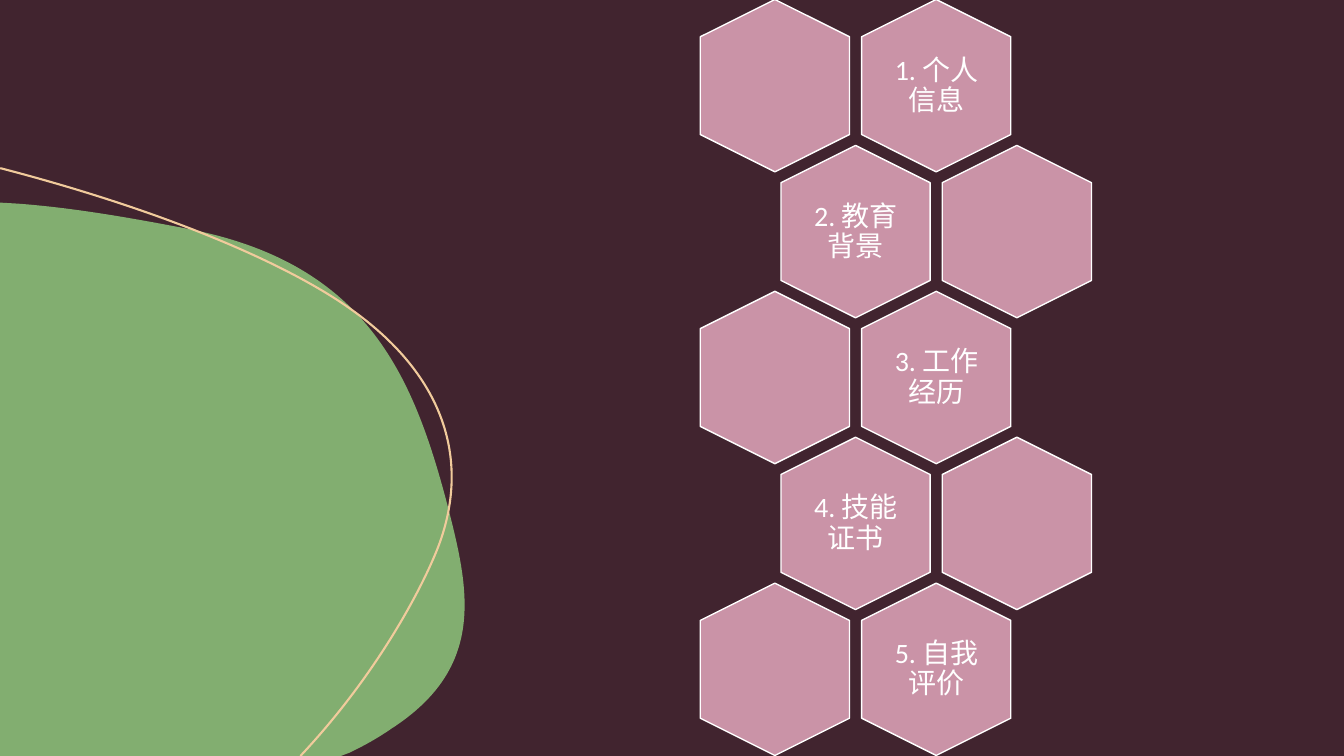
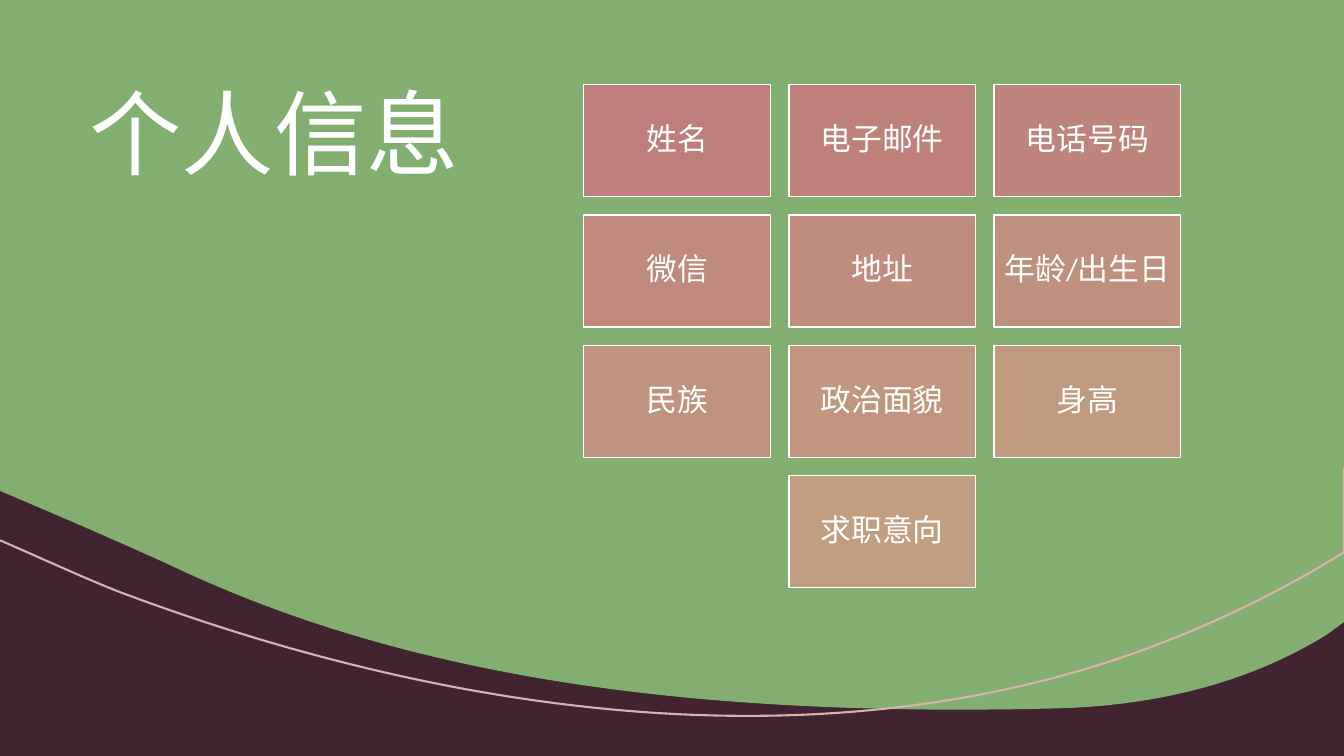
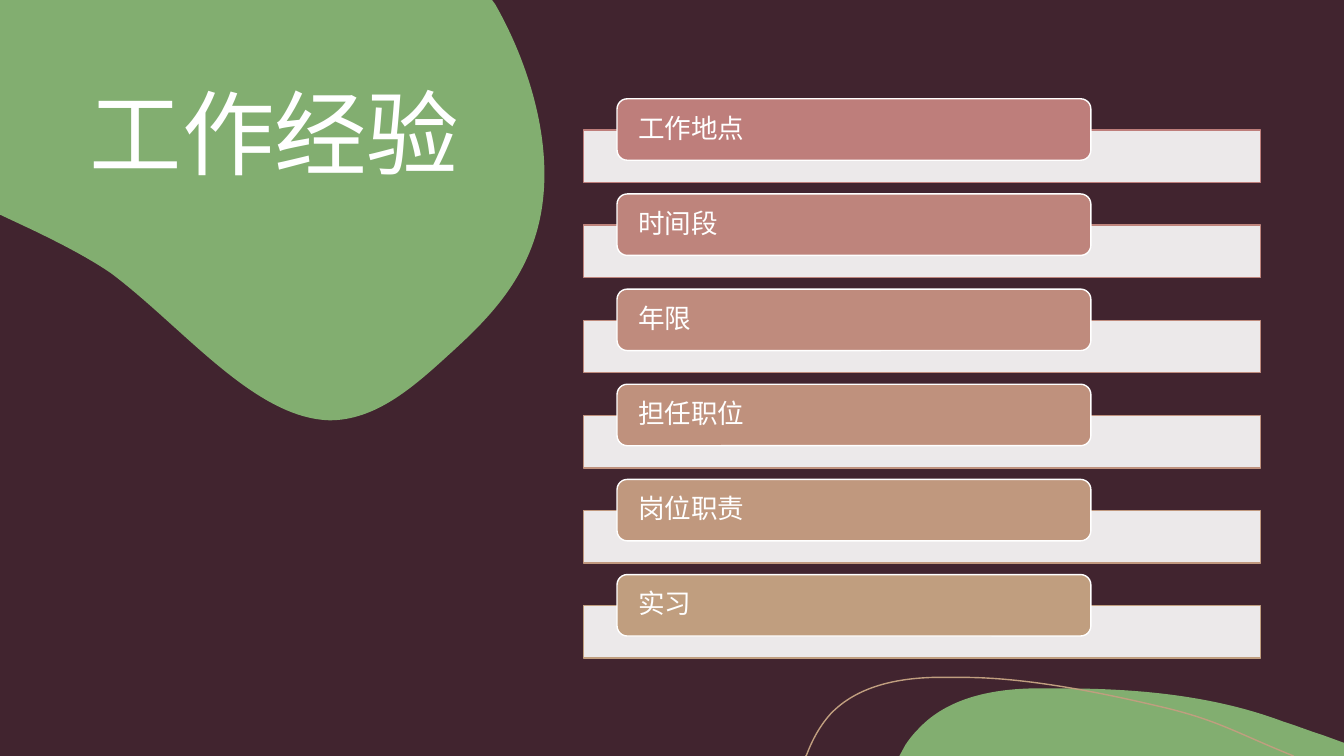
from pptx import Presentation
from pptx.dml.color import RGBColor
from pptx.enum.shapes import MSO_SHAPE as Preset
from pptx.enum.text import MSO_ANCHOR as Anchor, PP_ALIGN as Align
from pptx.oxml.ns import qn
from pptx.util import Inches, Pt
from lxml.etree import SubElement

SLIDE_W, SLIDE_H = 13.33, 7.5
PLUM, GREEN, PINK, WHITE = "41242F", "82AE70", "CA93A7", "FFFFFF"
SAND, ROSE = "F1CB9C", "D8B2B0"
RAMP_START, RAMP_END = "BE7E7B", "C09E7F"
TITLE_FONT, BODY_FONT = "Arial", "Calibri"
CURVE_STEPS = 24

# An outline is a start point, then lines (x, y) and Bezier curves (x1, y1, x2, y2, x, y).
AGENDA_BLOB = [
    (0, 2.01), (0.17, 2.02), (0.72, 2.06, 1.29, 2.16, 1.86, 2.27),
    (3.62, 2.61, 4.09, 3.7, 4.43, 4.98), (4.65, 5.83, 4.84, 6.61, 3.88, 7.23),
    (3.75, 7.32, 3.61, 7.4, 3.46, 7.47), (3.38, 7.5), (0, 7.5), (0, 2.01)]
AGENDA_ARC = [
    (0, 1.67), (0.01, 1.67), (1.39, 2.03, 2.58, 2.49, 3.32, 2.96),
    (4.43, 3.67, 4.66, 4.56, 4.36, 5.39), (4.22, 5.77, 3.77, 6.66, 2.98, 7.5)]
PERSONAL_BLOB = [
    (0, 0), (13.33, 0), (13.33, 6.17), (13.17, 6.29),
    (12.32, 6.82, 11.33, 7.02, 10.37, 7.03), (10.02, 7.04, 9.66, 7.04, 9.3, 7.04),
    (6.77, 7.02, 4.14, 6.75, 1.78, 5.65), (1.35, 5.45, 0.91, 5.26, 0.47, 5.07), (0, 4.87)]
PERSONAL_ARC = [
    (13.33, 4.64), (13.33, 5.48), (13.03, 5.66), (12.64, 5.88, 12.2, 6.11, 11.62, 6.34),
    (8.41, 7.62, 4.65, 7.16, 1.26, 5.9), (0.98, 5.8, 0.37, 5.52, 0, 5.36)]
WORK_BLOB = [
    (0, 0), (4.88, 0), (4.91, 0.04), (5.23, 0.6, 5.45, 1.31, 5.39, 1.94),
    (5.32, 2.7, 4.86, 3.15, 4.44, 3.53), (4.09, 3.85, 3.72, 4.17, 3.27, 4.17),
    (2.52, 4.15, 1.82, 3.25, 1.1, 2.71), (0.88, 2.56, 0.61, 2.42, 0.32, 2.28),
    (0, 2.13), (0, 0)]
WORK_HILL = [
    (10.54, 6.83), (11.28, 6.83, 12.04, 6.9, 12.73, 7.16),
    (12.86, 7.2, 12.98, 7.25, 13.11, 7.29), (13.33, 7.37), (13.33, 7.5), (8.92, 7.5),
    (8.98, 7.39), (9.02, 7.33, 9.06, 7.28, 9.11, 7.23),
    (9.39, 6.93, 9.82, 6.84, 10.23, 6.83), (10.33, 6.83, 10.43, 6.83, 10.54, 6.83)]
WORK_ARC = [
    (7.99, 7.5), (8, 7.49), (8.06, 7.33, 8.14, 7.19, 8.24, 7.08),
    (8.5, 6.81, 8.89, 6.73, 9.26, 6.72), (9.55, 6.72),
    (10.22, 6.72, 11, 6.89, 11.55, 7.02), (12.09, 7.15, 12.26, 7.27, 12.83, 7.5)]

AGENDA = ["1. 个人信息", "2. 教育背景", "3. 工作经历", "4. 技能证书", "5. 自我评价"]
PERSONAL_FIELDS = ["姓名", "电子邮件", "电话号码", "微信", "地址", "年龄/出生日",
                   "民族", "政治面貌", "身高", "求职意向"]
WORK_FIELDS = ["工作地点", "时间段", "年限", "担任职位", "岗位职责", "实习"]


def rgb(color):
    return RGBColor.from_string(color)


def spread(first, last, count):
    """Return count evenly spaced values from first to last."""
    return [first + (last - first) * i / (count - 1) for i in range(count)]


def ramp(count):
    """Return count colours evenly spaced from RAMP_START to RAMP_END."""
    channels = [spread(a, b, count) for a, b in zip(rgb(RAMP_START), rgb(RAMP_END))]
    return ["".join(f"{round(value):02X}" for value in color) for color in zip(*channels)]


def paint(shape, fill=None, line=None, width=1.0):
    shape.shadow.inherit = False
    if fill:
        shape.fill.solid()
        shape.fill.fore_color.rgb = rgb(fill)
    else:
        shape.fill.background()
    if line:
        shape.line.color.rgb = rgb(line)
        shape.line.width = Pt(width)
    else:
        shape.line.fill.background()


def flatten(outline):
    """Turn an outline into points, with each curve cut into short lines."""
    points = [outline[0]]
    for step in outline[1:]:
        if len(step) == 2:
            points.append(step)
            continue
        controls = [points[-1], step[:2], step[2:4], step[4:]]
        for i in range(1, CURVE_STEPS + 1):
            t = i / CURVE_STEPS
            weights = ((1 - t) ** 3, 3 * t * (1 - t) ** 2, 3 * t ** 2 * (1 - t), t ** 3)
            points.append(tuple(sum(w * c[axis] for w, c in zip(weights, controls))
                                for axis in (0, 1)))
    return points


def restore_curves(shape, outline, closed):
    """Replace the short lines of a freeform by the true Bezier curves."""
    geometry = next(shape._element.iter(qn("a:path")))
    for segment in list(geometry):
        geometry.remove(segment)
    for i, step in enumerate(outline):
        tag = "a:moveTo" if i == 0 else "a:lnTo" if len(step) == 2 else "a:cubicBezTo"
        segment = SubElement(geometry, qn(tag))
        for x, y in zip(step[::2], step[1::2]):
            point = SubElement(segment, qn("a:pt"))
            point.set("x", str(Inches(x) - shape.left))
            point.set("y", str(Inches(y) - shape.top))
    if closed:
        SubElement(geometry, qn("a:close"))


def draw_outline(slide, outline, fill=None, line=None, width=1.0):
    """Draw a closed blob when fill is given, otherwise an open arc."""
    closed = fill is not None
    start, *rest = [(Inches(x), Inches(y)) for x, y in flatten(outline)]
    builder = slide.shapes.build_freeform(*start)
    builder.add_line_segments(rest, close=closed)
    shape = builder.convert_to_shape()
    restore_curves(shape, outline, closed)
    paint(shape, fill, line, width)


def add_preset(slide, preset, box, fill, line):
    shape = slide.shapes.add_shape(preset, *map(Inches, box))
    paint(shape, fill, line)
    return shape


def write(shape, text, size, font=BODY_FONT, align=Align.CENTER,
          anchor=Anchor.MIDDLE, insets=(0.09, 0.09)):
    frame = shape.text_frame
    frame.word_wrap = True
    frame.vertical_anchor = anchor
    frame.margin_left = frame.margin_right = Inches(insets[0])
    frame.margin_top = frame.margin_bottom = Inches(insets[1])
    paragraph = frame.paragraphs[0]
    paragraph.text = text
    paragraph.alignment = align
    paragraph.line_spacing = 0.9
    paragraph.font.name = font
    paragraph.font.size = Pt(size)
    paragraph.font.color.rgb = rgb(WHITE)


def add_text(slide, box, text, size, **style):
    write(slide.shapes.add_textbox(*map(Inches, box)), text, size, **style)


def add_title(slide, text, width):
    add_text(slide, (0.79, 0.83, width, 2.5), text, 66, font=TITLE_FONT,
             align=Align.LEFT, anchor=Anchor.TOP, insets=(0.1, 0.05))


def new_slide(deck):
    slide = deck.slides.add_slide(deck.slide_layouts[6])
    slide.background.fill.solid()
    slide.background.fill.fore_color.rgb = rgb(PLUM)
    return slide


def add_hexagon(slide, left, top):
    hexagon = add_preset(slide, Preset.HEXAGON, (left, top, 1.71, 1.48), PINK, WHITE)
    hexagon.adjustments[0] = 0.25
    hexagon.rotation = 90


def add_agenda_honeycomb(slide):
    """Two hexagons a row, odd rows shifted by half a cell; labels run down the middle."""
    pitch = 1.6
    for row, (label, top) in enumerate(zip(AGENDA, spread(0.11, 5.9, len(AGENDA)))):
        odd = row % 2
        left = 6.83 + odd * pitch / 2
        for column in range(2):
            add_hexagon(slide, left + column * pitch, top)
        label_left = left + (1 - odd) * pitch + 0.35
        add_text(slide, (label_left, top + 0.16, 1.02, 1.17), label, 20, insets=(0.08, 0.08))


def add_field_grid(slide):
    """Three cards a row, with a short last row centred."""
    lefts, tops = spread(5.79, 9.86, 3), spread(0.84, 4.72, 4)
    columns = len(lefts)
    colors = ramp(len(PERSONAL_FIELDS))
    for i, (field, color) in enumerate(zip(PERSONAL_FIELDS, colors)):
        row, column = divmod(i, columns)
        in_row = min(columns, len(PERSONAL_FIELDS) - row * columns)
        left = lefts[column + (columns - in_row) // 2]
        card = add_preset(slide, Preset.RECTANGLE, (left, tops[row], 1.85, 1.11), color, WHITE)
        write(card, field, 22)


def set_alpha(shape, percent):
    color = next(shape._element.spPr.iter(qn("a:srgbClr")))
    SubElement(color, qn("a:alpha")).set("val", str(percent * 1000))


def add_work_bars(slide):
    count = len(WORK_FIELDS)
    for field, color, top in zip(WORK_FIELDS, ramp(count), spread(0.98, 5.7, count)):
        panel = add_preset(slide, Preset.RECTANGLE, (5.79, top + 0.31, 6.71, 0.52), WHITE, color)
        set_alpha(panel, 90)
        tab = add_preset(slide, Preset.ROUNDED_RECTANGLE, (6.12, top, 4.7, 0.61), color, WHITE)
        write(tab, field, 19, align=Align.LEFT, insets=(0.18, 0))


def build_agenda(deck):
    slide = new_slide(deck)
    draw_outline(slide, AGENDA_BLOB, fill=GREEN)
    draw_outline(slide, AGENDA_ARC, line=SAND, width=1.5)
    add_agenda_honeycomb(slide)


def build_personal(deck):
    slide = new_slide(deck)
    draw_outline(slide, PERSONAL_BLOB, fill=GREEN)
    draw_outline(slide, PERSONAL_ARC, line=ROSE, width=1.5)
    add_title(slide, "个人信息", 3.94)
    add_field_grid(slide)


def build_work(deck):
    slide = new_slide(deck)
    draw_outline(slide, WORK_BLOB, fill=GREEN)
    add_title(slide, "工作经验", 4.21)
    draw_outline(slide, WORK_HILL, fill=GREEN)
    draw_outline(slide, WORK_ARC, line=RAMP_END)
    add_work_bars(slide)


def main():
    deck = Presentation()
    deck.slide_width, deck.slide_height = Inches(SLIDE_W), Inches(SLIDE_H)
    build_agenda(deck)
    build_personal(deck)
    build_work(deck)
    deck.save("out.pptx")


if __name__ == "__main__":
    main()
